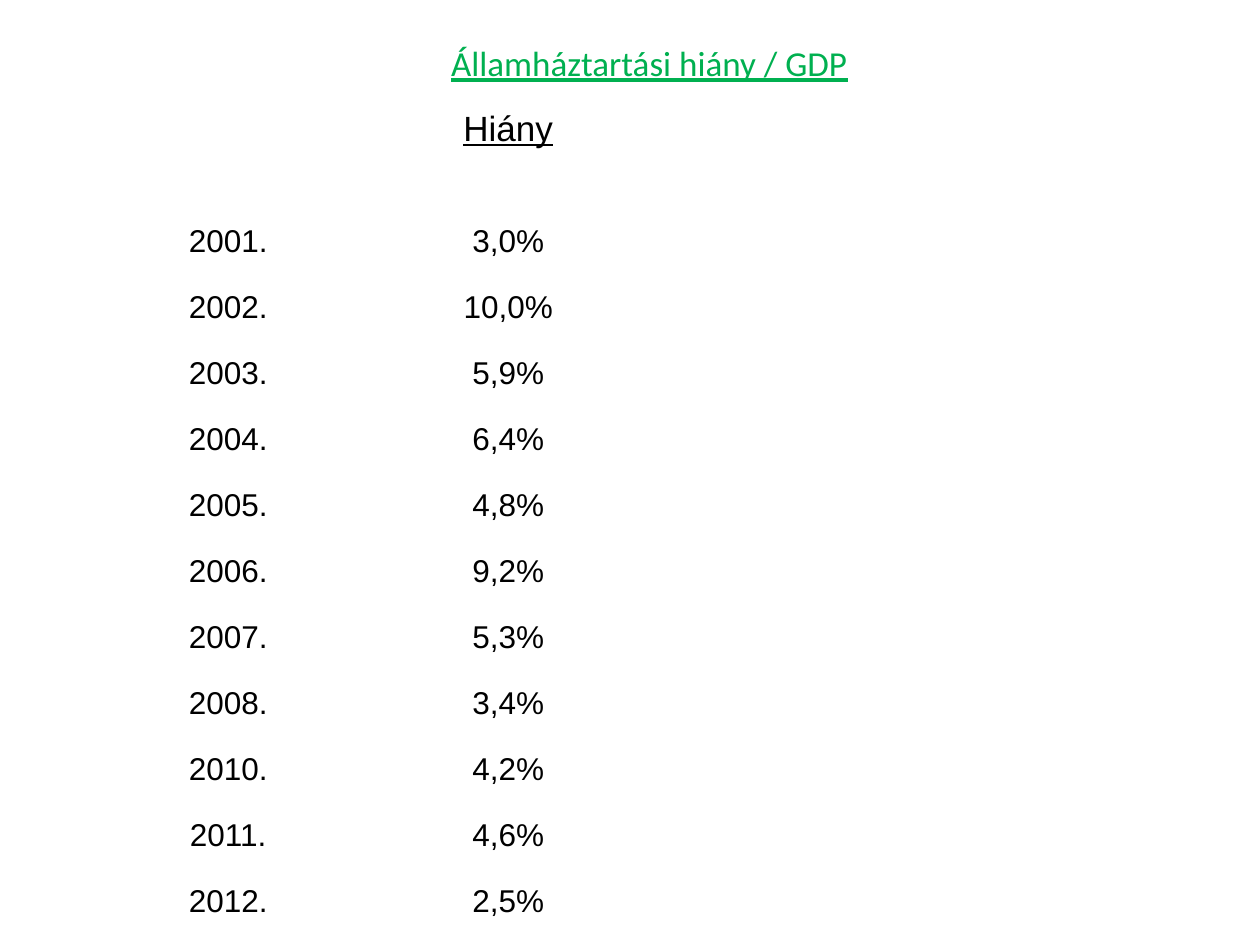
"""Builds a slide listing the yearly budget deficit as a share of GDP."""
from dataclasses import dataclass

from pptx import Presentation
from pptx.dml.color import RGBColor
from pptx.enum.text import MSO_ANCHOR, MSO_AUTO_SIZE, PP_ALIGN
from pptx.util import Pt


@dataclass(frozen=True)
class Theme:
    heading_color: RGBColor = RGBColor(0x00, 0xB0, 0x50)
    text_color: RGBColor = RGBColor(0x00, 0x00, 0x00)
    heading_font: str = "Calibri"
    text_font: str = "Arial"
    heading_size: int = 20
    text_size: int = 18
    plain_table: str = "{2D5ABB26-0587-4C30-8999-92F81FD0307C}"


class SlideBuilder:
    def __init__(self, slide, theme):
        self.slide = slide
        self.theme = theme

    def style(self, paragraph, name, size, color, underline=False):
        paragraph.alignment = PP_ALIGN.CENTER
        font = paragraph.font
        font.name, font.size, font.underline = name, Pt(size), underline
        font.color.rgb = color

    def heading(self, text, left, top, width, height):
        frame = self.slide.shapes.add_textbox(
            Pt(left), Pt(top), Pt(width), Pt(height)).text_frame
        frame.word_wrap = True
        frame.auto_size = MSO_AUTO_SIZE.SHAPE_TO_FIT_TEXT
        frame.text = text
        self.style(frame.paragraphs[0], self.theme.heading_font,
                   self.theme.heading_size, self.theme.heading_color, True)

    def table(self, rows, left, top, column_width, header_height, row_height):
        columns = len(rows[0])
        height = header_height + row_height * (len(rows) - 1)
        frame = self.slide.shapes.add_table(
            len(rows), columns, Pt(left), Pt(top),
            Pt(column_width * columns), Pt(height))
        grid = frame.table
        grid.first_row = grid.horz_banding = False
        grid._tbl.tblPr.find("{*}tableStyleId").text = self.theme.plain_table
        for column in grid.columns:
            column.width = Pt(column_width)
        for index, values in enumerate(rows):
            is_header = index == 0
            grid.rows[index].height = Pt(header_height if is_header else row_height)
            size = self.theme.heading_size if is_header else self.theme.text_size
            for cell, value in zip(grid.rows[index].cells, values):
                cell.fill.background()
                cell.vertical_anchor = MSO_ANCHOR.MIDDLE if is_header else MSO_ANCHOR.BOTTOM
                cell.text = value
                self.style(cell.text_frame.paragraphs[0], self.theme.text_font,
                           size, self.theme.text_color, is_header)


DEFICITS = [
    ("", "Hiány"),
    ("2001.", "3,0%"),
    ("2002.", "10,0%"),
    ("2003.", "5,9%"),
    ("2004.", "6,4%"),
    ("2005.", "4,8%"),
    ("2006.", "9,2%"),
    ("2007.", "5,3%"),
    ("2008.", "3,4%"),
    ("2010.", "4,2%"),
    ("2011.", "4,6%"),
    ("2012.", "2,5%"),
]


def main():
    deck = Presentation()
    deck.slide_width, deck.slide_height = Pt(720), Pt(540)
    builder = SlideBuilder(deck.slides.add_slide(deck.slide_layouts[6]), Theme())
    builder.table(DEFICITS, left=50.4, top=33.9, column_width=160,
                  header_height=80, row_height=37.75)
    builder.heading("Államháztartási hiány / GDP", 206.6, 20.2, 329, 31.6)
    deck.save("out.pptx")


if __name__ == "__main__":
    main()
